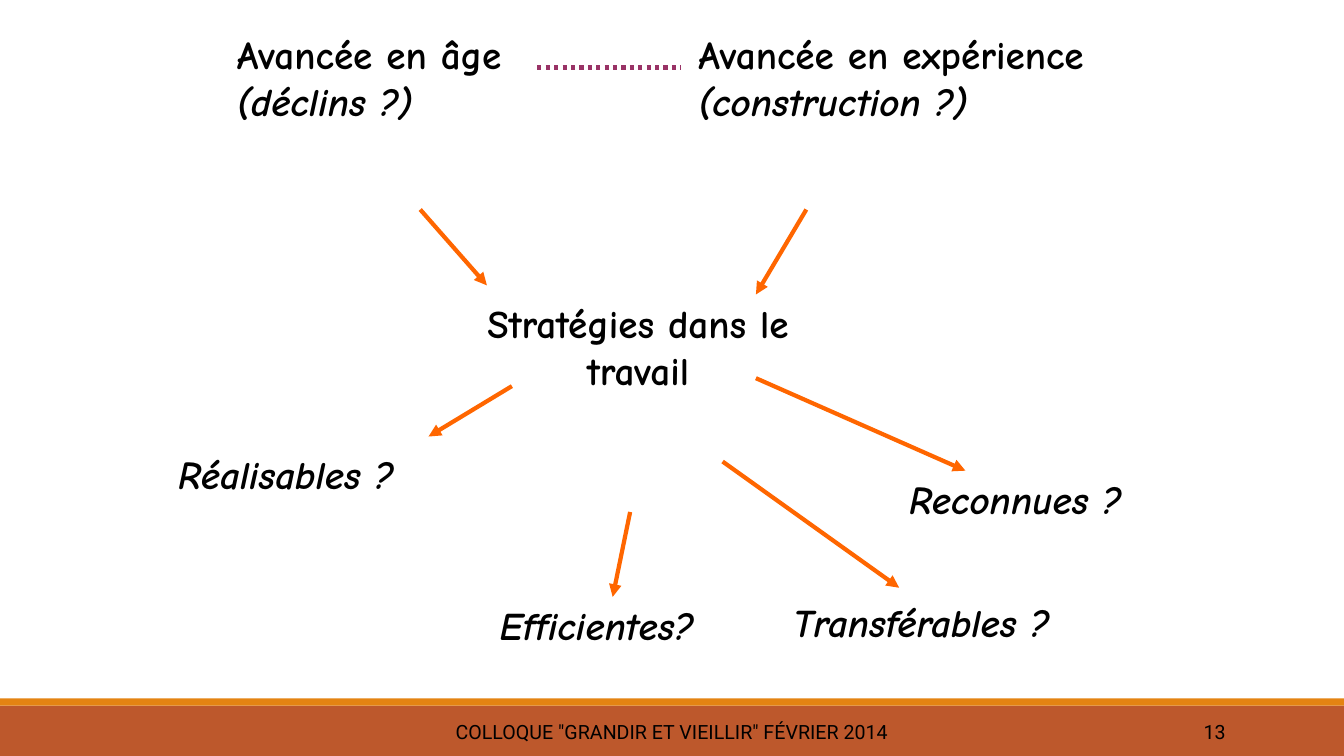
"""Build the slide on work strategies between ageing and experience."""
from lxml.etree import SubElement
from pptx import Presentation
from pptx.dml.color import RGBColor
from pptx.enum.dml import MSO_LINE
from pptx.enum.shapes import MSO_CONNECTOR, MSO_SHAPE
from pptx.enum.text import MSO_ANCHOR, PP_ALIGN
from pptx.oxml.ns import qn
from pptx.util import Cm, Pt

BLACK = RGBColor(0x00, 0x00, 0x00)
RUST = RGBColor(0xBD, 0x58, 0x2C)
AMBER = RGBColor(0xE4, 0x83, 0x12)
ORANGE = RGBColor(0xFF, 0x66, 0x00)
PLUM = RGBColor(0x99, 0x33, 0x66)

WIDTH, HEIGHT = 33.87, 19.05
BARS = [(17.78, 1.27, RUST), (17.6, 0.18, AMBER)]
FOOTERS = [
    ('COLLOQUE "GRANDIR ET VIEILLIR" FÉVRIER 2014', (10.24, 17.93, 13.39, 1.02), PP_ALIGN.CENTER),
    ("13", (27.51, 17.93, 3.63, 1.02), PP_ALIGN.RIGHT),
]
LABELS = [
    ("Avancée en âge ", "(déclins ?)", (5.72, 0.64, 8.05, 2.62), PP_ALIGN.LEFT),
    ("Avancée en expérience ", "(construction ?)", (17.35, 0.64, 11.43, 2.62), PP_ALIGN.LEFT),
    ("Stratégies dans le travail", "", (11, 7.42, 10.16, 2.62), PP_ALIGN.CENTER),
    ("", "Réalisables ?", (4.24, 11.23, 7.19, 1.45), PP_ALIGN.LEFT),
    ("", "Efficientes?", (9.32, 15.04, 11.43, 1.45), PP_ALIGN.CENTER),
    ("", "Transférables ?", (19.74, 14.94, 9.3, 1.45), PP_ALIGN.LEFT),
    ("", "Reconnues ?", (22.66, 11.86, 6.99, 1.45), PP_ALIGN.LEFT),
]
DOTTED_LINK = (13.54, 1.7, 17.15, 1.7)
ARROWS = [
    (10.59, 5.28, 12.27, 7.19),
    (20.32, 5.28, 19.05, 7.42),
    (12.9, 9.73, 10.8, 11),
    (15.88, 12.9, 15.44, 15.04),
    (18.21, 11.63, 22.66, 14.81),
    (19.05, 9.53, 24.33, 11.86),
]


def add_text(slide, text, italic_text="", *, box, font, size, align, bold=False, anchor=MSO_ANCHOR.TOP):
    """Add a text box with an upright part followed by an italic part."""
    tf = slide.shapes.add_textbox(*map(Cm, box)).text_frame
    tf.word_wrap = True
    tf.vertical_anchor = anchor
    p = tf.paragraphs[0]
    p.alignment = align
    for part, italic in ((text, False), (italic_text, True)):
        if part:
            r = p.add_run()
            r.text = part
            r.font.name, r.font.size = font, Pt(size)
            r.font.bold, r.font.italic = bold, italic
            r.font.color.rgb = BLACK


def add_line(slide, ends, color, dash=None, arrow=False):
    """Add a straight line, dotted or with an arrowhead if asked."""
    line = slide.shapes.add_connector(MSO_CONNECTOR.STRAIGHT, *map(Cm, ends))
    line.line.color.rgb = color
    line.line.width = Pt(3)
    if dash:
        line.line.dash_style = dash
    sp_pr = line.element.spPr
    if arrow:
        SubElement(sp_pr.find(qn("a:ln")), qn("a:tailEnd"), type="triangle")
    SubElement(sp_pr, qn("a:effectLst"))


def main():
    """Assemble and save the slide."""
    prs = Presentation()
    prs.slide_width, prs.slide_height = Cm(WIDTH), Cm(HEIGHT)
    slide = prs.slides.add_slide(prs.slide_layouts[6])
    for top, height, color in BARS:
        sp = slide.shapes.add_shape(MSO_SHAPE.RECTANGLE, 0, Cm(top), Cm(WIDTH), Cm(height))
        sp.shadow.inherit = False
        sp.fill.solid()
        sp.fill.fore_color.rgb = color
        sp.line.fill.background()
    for text, box, align in FOOTERS:
        add_text(slide, text, box=box, font="Roboto", size=14, align=align, anchor=MSO_ANCHOR.MIDDLE)
    for text, italic_text, box, align in LABELS:
        add_text(slide, text, italic_text, box=box, font="Comic Neue", size=28, align=align, bold=True)
    add_line(slide, DOTTED_LINK, PLUM, dash=MSO_LINE.ROUND_DOT)
    for ends in ARROWS:
        add_line(slide, ends, ORANGE, arrow=True)
    prs.save("out.pptx")


if __name__ == "__main__":
    main()
